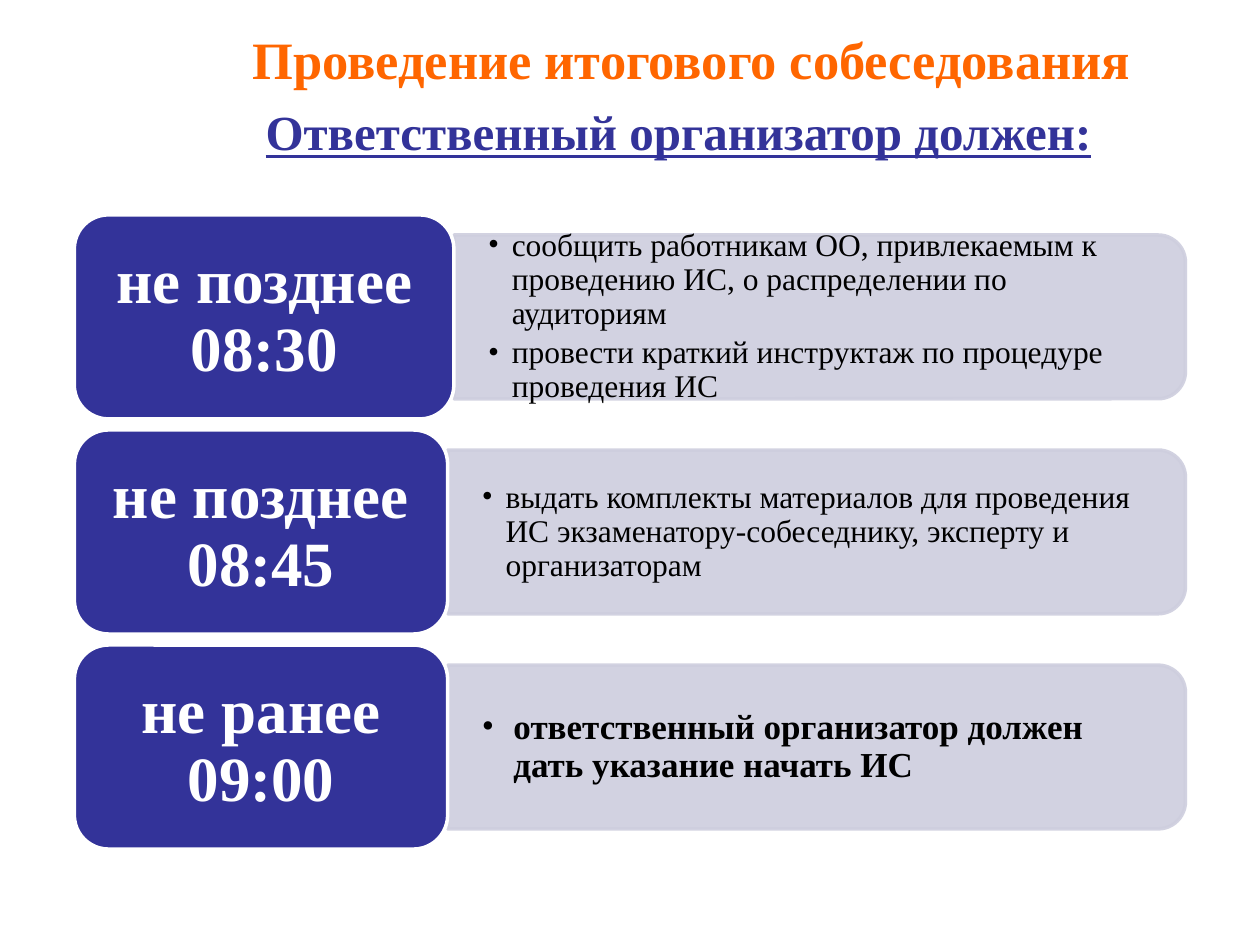
from lxml import etree
from pptx import Presentation
from pptx.dml.color import RGBColor
from pptx.enum.shapes import MSO_SHAPE
from pptx.enum.text import MSO_ANCHOR, PP_ALIGN
from pptx.oxml.ns import qn
from pptx.util import Pt

ROUNDED = MSO_SHAPE.ROUNDED_RECTANGLE
ROUNDED_TOP = MSO_SHAPE.ROUND_2_SAME_RECTANGLE
TOP, MIDDLE = MSO_ANCHOR.TOP, MSO_ANCHOR.MIDDLE
LEFT, CENTER = PP_ALIGN.LEFT, PP_ALIGN.CENTER

FONT = "Times New Roman"
ORANGE, INDIGO, LAVENDER = "FF6600", "333399", "CECEDE"
WHITE, BLACK = "FFFFFF", "000000"

CARD_LEFT, CARD_HEIGHT = 42.5, 116.6
FIRST_TOP, ROW_PITCH = 122.8, 122.9
BAR_RIGHT, BAR_HEIGHT = 677.4, 93.6
DUTY_HEIGHT, DUTY_TRIM = 84.2, 4.3

# time, card width, duties, duty size, bullet indent, bold duties
STEPS = [
    ("не позднее 08:30", 216.9,
     ["сообщить работникам ОО, привлекаемым к проведению ИС, "
      "о распределении по аудиториям",
      "провести краткий инструктаж по процедуре проведения ИС"],
     18, 13.5, False),
    ("не позднее 08:45", 213.3,
     ["выдать комплекты материалов для проведения ИС "
      "экзаменатору-собеседнику, эксперту и организаторам"],
     18, 13.5, False),
    ("не ранее 09:00", 213.3,
     ["ответственный организатор должен дать указание начать ИС"],
     20, 18, True),
]


def rgb(hex_color):
    return RGBColor.from_string(hex_color)


def set_alpha(properties, percent):
    """Make every solid colour below the given XML element translucent."""
    for color in properties.iter(qn("a:srgbClr")):
        etree.SubElement(color, qn("a:alpha")).set("val", str(percent * 1000))


def add_block(slide, preset, left, top, width, height, fill, outline):
    block = slide.shapes.add_shape(preset, Pt(left), Pt(top), Pt(width), Pt(height))
    block.shadow.inherit = False
    block.fill.solid()
    block.fill.fore_color.rgb = rgb(fill)
    block.line.color.rgb = rgb(outline)
    block.line.width = Pt(2)
    return block


def set_frame(shape, anchor, side_inset=7.2, end_inset=3.6):
    frame = shape.text_frame
    frame.word_wrap = True
    frame.vertical_anchor = anchor
    frame.margin_left = frame.margin_right = Pt(side_inset)
    frame.margin_top = frame.margin_bottom = Pt(end_inset)
    return frame


def add_text_box(slide, left, top, width, height):
    return slide.shapes.add_textbox(Pt(left), Pt(top), Pt(width), Pt(height))


def add_run(paragraph, text, size, color, align=LEFT, bold=True, underline=False):
    paragraph.alignment = align
    run = paragraph.add_run()
    run.text = text
    font = run.font
    font.name, font.size, font.bold = FONT, Pt(size), bold
    font.underline = underline
    font.color.rgb = rgb(color)


def set_bullet(paragraph, indent):
    properties = paragraph._p.get_or_add_pPr()
    properties.set("marL", str(Pt(indent)))
    properties.set("indent", str(-Pt(indent)))
    etree.SubElement(properties, qn("a:buFont")).set("typeface", FONT)
    etree.SubElement(properties, qn("a:buChar")).set("char", "•")


def add_bar(slide, left, middle):
    """Bar rounded on the right: a top-rounded shape turned a quarter."""
    length = BAR_RIGHT - left
    bar = add_block(slide, ROUNDED_TOP, left + (length - BAR_HEIGHT) / 2,
                    middle - length / 2, BAR_HEIGHT, length, LAVENDER, LAVENDER)
    bar.rotation = 90
    set_alpha(bar._element.spPr, 90)


def add_duties(slide, left, middle, duties, size, indent, bold):
    box = add_text_box(slide, left, middle - DUTY_HEIGHT / 2,
                       BAR_RIGHT - left - DUTY_TRIM, DUTY_HEIGHT)
    frame = set_frame(box, MIDDLE, 19.6, 10)
    for index, duty in enumerate(duties):
        paragraph = frame.add_paragraph() if index else frame.paragraphs[0]
        set_bullet(paragraph, indent)
        paragraph.line_spacing = 0.9
        paragraph.space_after = Pt(3)
        add_run(paragraph, duty, size, BLACK, bold=bold)


def add_time_card(slide, top, width, time):
    card = add_block(slide, ROUNDED, CARD_LEFT, top, width, CARD_HEIGHT, INDIGO, WHITE)
    paragraph = set_frame(card, MIDDLE, 8, 5).paragraphs[0]
    paragraph.line_spacing = 0.9
    add_run(paragraph, time, 36, WHITE, CENTER)


def add_step(slide, top, time, card_width, duties, size, indent, bold):
    bar_left = CARD_LEFT + card_width
    middle = top + CARD_HEIGHT / 2
    add_bar(slide, bar_left, middle)
    add_duties(slide, bar_left, middle, duties, size, indent, bold)
    add_time_card(slide, top, card_width, time)


def add_headings(slide):
    title = set_frame(add_text_box(slide, 71.3, 12, 648, 42), TOP)
    add_run(title.paragraphs[0], "Проведение итогового собеседования",
            30, ORANGE, CENTER)
    subtitle = set_frame(add_text_box(slide, 144.7, 54.7, 532.8, 41), TOP)
    add_run(subtitle.paragraphs[0], "Ответственный организатор должен:",
            28, INDIGO, underline=True)


def main():
    presentation = Presentation()
    presentation.slide_width, presentation.slide_height = Pt(720), Pt(540)
    slide = presentation.slides.add_slide(presentation.slide_layouts[6])
    add_headings(slide)
    for row, step in enumerate(STEPS):
        add_step(slide, FIRST_TOP + row * ROW_PITCH, *step)
    presentation.save("out.pptx")


if __name__ == "__main__":
    main()
